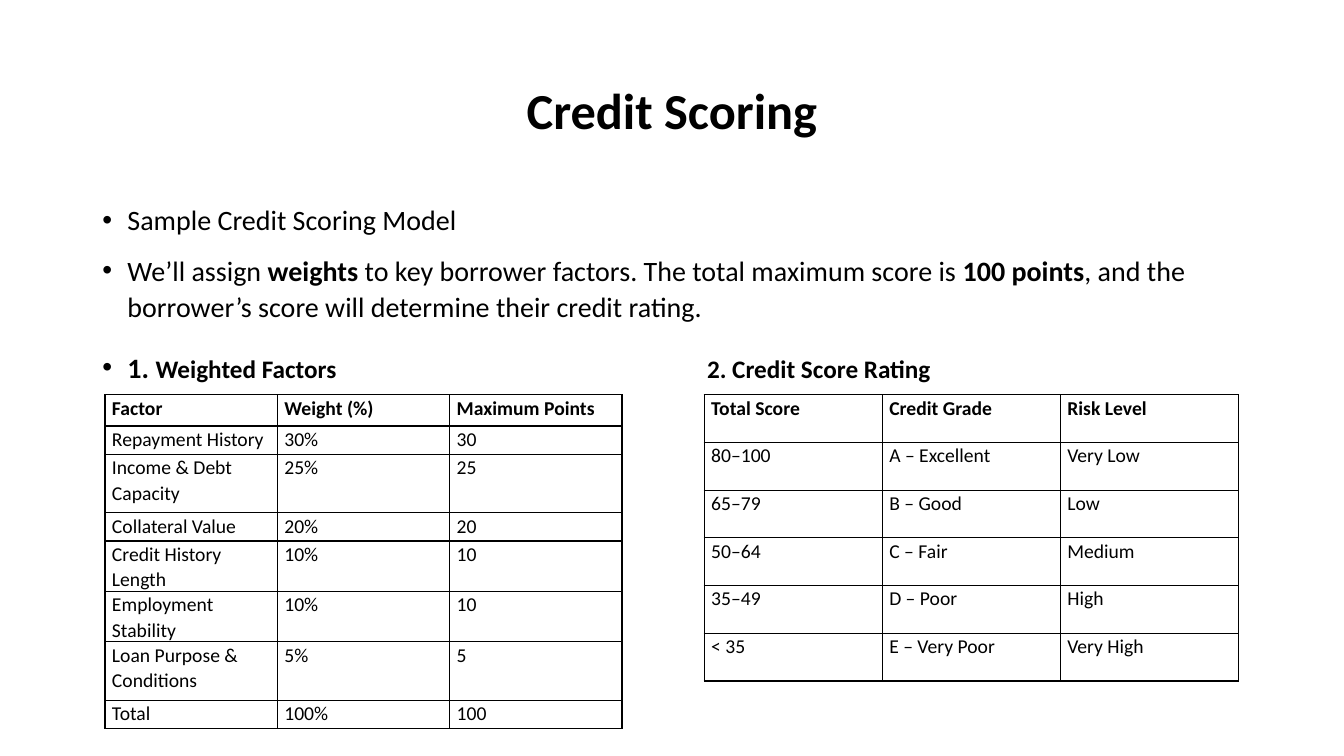
from lxml import etree
from pptx import Presentation
from pptx.dml.color import RGBColor
from pptx.enum.text import MSO_ANCHOR, PP_ALIGN
from pptx.oxml.ns import qn
from pptx.util import Pt

CENTER = PP_ALIGN.CENTER
LEFT = PP_ALIGN.LEFT
MIDDLE = MSO_ANCHOR.MIDDLE
TOP = MSO_ANCHOR.TOP
FONT = "Calibri"
BLACK = "000000"
TITLE_ONLY = 5

FACTORS = [
    ("Factor", "Weight (%)", "Maximum Points"),
    ("Repayment History", "30%", "30"),
    ("Income & Debt Capacity", "25%", "25"),
    ("Collateral Value", "20%", "20"),
    ("Credit History Length", "10%", "10"),
    ("Employment Stability", "10%", "10"),
    ("Loan Purpose & Conditions", "5%", "5"),
    ("Total", "100%", "100"),
]
FACTOR_HEIGHTS = [22.3, 20.2, 41.8, 20.2, 20.2, 20.2, 41.8, 20.2]
RATINGS = [
    ("Total Score", "Credit Grade", "Risk Level"),
    ("80–100", "A – Excellent", "Very Low"),
    ("65–79", "B – Good", "Low"),
    ("50–64", "C – Fair", "Medium"),
    ("35–49", "D – Poor", "High"),
    ("< 35", "E – Very Poor", "Very High"),
]
RATING_HEIGHTS = [34.1] * len(RATINGS)


def color(value):
    return RGBColor.from_string(value)


def add_run(p, text, size=20, bold=False, fill=BLACK):
    r = p.add_run()
    r.text = text
    r.font.name = FONT
    r.font.size = Pt(size)
    r.font.bold = bold
    r.font.color.rgb = color(fill)


def set_spacing(p, line, before=0, after=0, align=LEFT):
    p.alignment = align
    p.line_spacing = line
    p.space_before = Pt(before)
    p.space_after = Pt(after)


def add_bullet(p, indent=18, tab=None):
    pPr = p._p.get_or_add_pPr()
    pPr.set("marL", str(Pt(indent)))
    pPr.set("indent", str(-Pt(indent)))
    etree.SubElement(pPr, qn("a:buFont"), typeface="Arial")
    etree.SubElement(pPr, qn("a:buChar"), char="•")
    if tab:
        tabs = etree.SubElement(pPr, qn("a:tabLst"))
        etree.SubElement(tabs, qn("a:tab"), pos=str(Pt(tab)), algn="l")


def add_borders(cell, width=1):
    tcPr = cell._tc.get_or_add_tcPr()
    for i, side in enumerate(("lnL", "lnR", "lnT", "lnB")):
        ln = etree.Element(qn("a:" + side), w=str(Pt(width)))
        fill = etree.SubElement(ln, qn("a:solidFill"))
        etree.SubElement(fill, qn("a:srgbClr"), val=BLACK)
        tcPr.insert(i, ln)


def add_title(s, left, top, width, height):
    sp = s.shapes.title
    sp.left, sp.top, sp.width, sp.height = map(Pt, (left, top, width, height))
    tf = sp.text_frame
    tf.vertical_anchor = MIDDLE
    p = tf.paragraphs[0]
    set_spacing(p, 0.9, align=CENTER)
    add_run(p, "Credit Scoring", size=36, bold=True)


def add_body(s, left, top, width, height):
    tf = s.shapes.add_textbox(*map(Pt, (left, top, width, height))).text_frame
    tf.word_wrap = True
    intro = tf.paragraphs[0]
    set_spacing(intro, 0.9)
    add_bullet(intro)
    add_run(intro, "Sample Credit Scoring Model")

    weights = tf.add_paragraph()
    set_spacing(weights, 1.07, before=10, after=8)
    add_bullet(weights)
    add_run(weights, "We’ll assign ")
    add_run(weights, "weights", bold=True)
    add_run(weights, " to key borrower factors. The total maximum score is ")
    add_run(weights, "100 points", bold=True)
    add_run(weights, ", and the borrower’s score will determine their credit rating.")

    headings = tf.add_paragraph()
    set_spacing(headings, 1.07, before=10, after=8)
    add_bullet(headings, tab=432)
    add_run(headings, "1. ", bold=True)
    add_run(headings, "Weighted Factors\t2. Credit Score Rating", size=18, bold=True)


def add_grid(s, rows, heights, left, top, width):
    columns = len(rows[0])
    box = map(Pt, (left, top, width, sum(heights)))
    table = s.shapes.add_table(len(rows), columns, *box).table
    table.first_row = False
    table.horz_banding = False
    for column in table.columns:
        column.width = Pt(width / columns)
    for i, (values, height) in enumerate(zip(rows, heights)):
        table.rows[i].height = Pt(height)
        for j, value in enumerate(values):
            cell = table.cell(i, j)
            cell.margin_left = cell.margin_right = Pt(5)
            cell.margin_top = cell.margin_bottom = 0
            cell.vertical_anchor = TOP
            cell.fill.background()
            add_borders(cell)
            p = cell.text_frame.paragraphs[0]
            set_spacing(p, 1.07, after=8)
            add_run(p, value, size=14, bold=i == 0)


def main():
    prs = Presentation()
    prs.slide_width, prs.slide_height = Pt(960), Pt(540)
    s = prs.slides.add_slide(prs.slide_layouts[TITLE_ONLY])
    add_title(s, 66, 28.8, 828, 104.4)
    add_body(s, 66, 144, 828, 342.7)
    add_grid(s, FACTORS, FACTOR_HEIGHTS, 75, 282, 369.4)
    add_grid(s, RATINGS, RATING_HEIGHTS, 503, 282, 381.6)
    prs.save("out.pptx")


if __name__ == "__main__":
    main()
